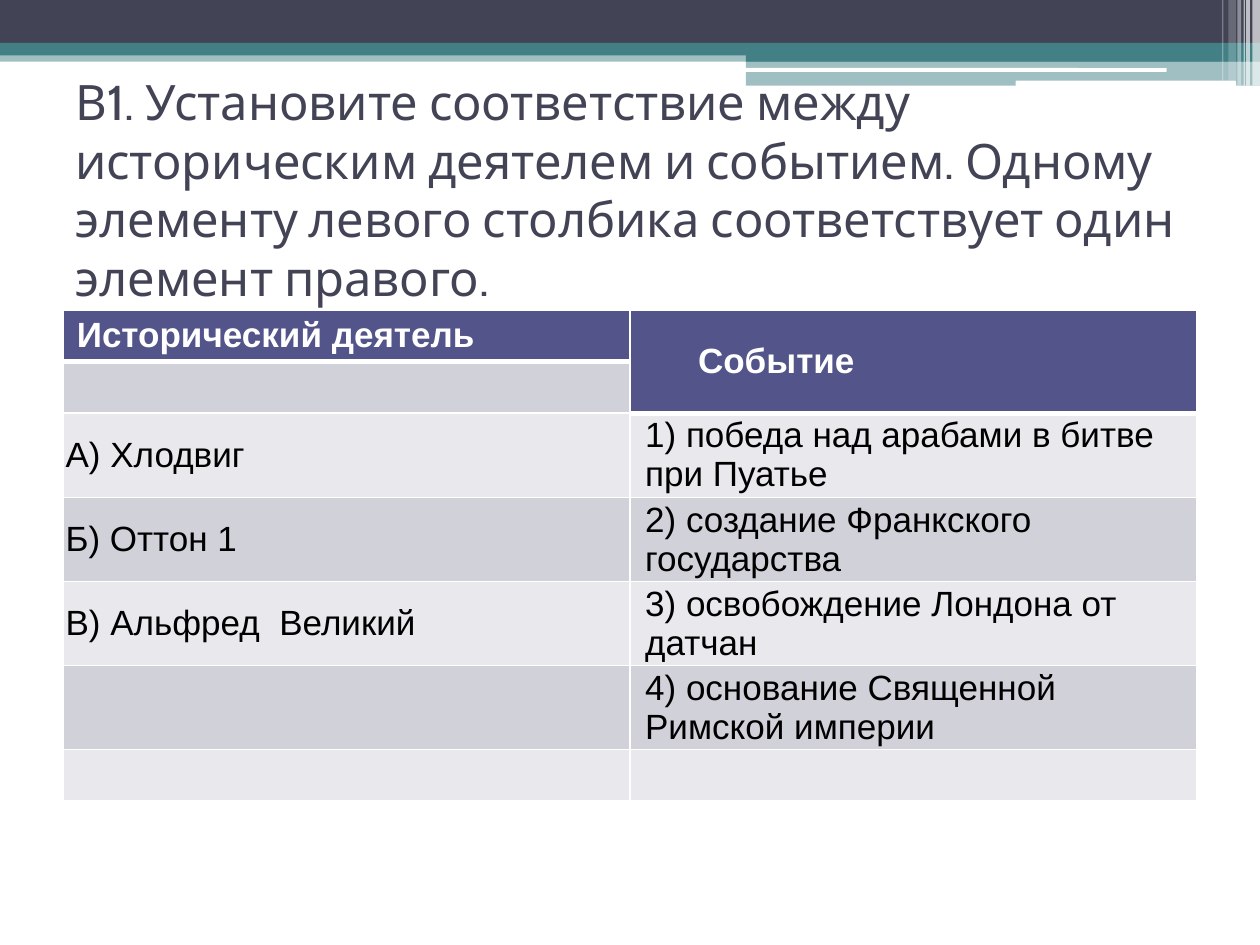
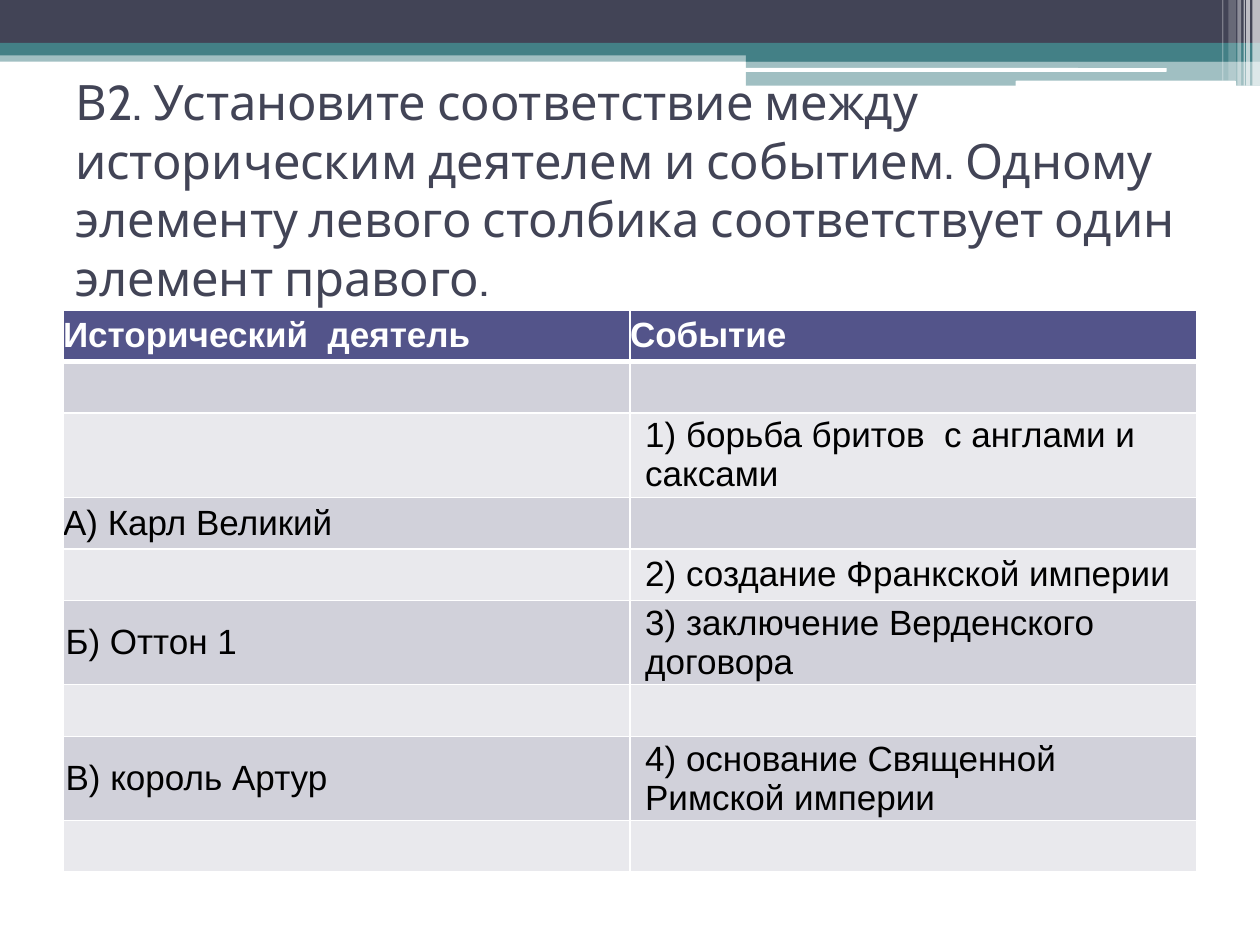
from lxml import etree
from pptx import Presentation
from pptx.dml.color import RGBColor
from pptx.enum.shapes import MSO_SHAPE
from pptx.enum.text import MSO_ANCHOR
from pptx.oxml.ns import qn
from pptx.util import Inches, Pt

RECT, ROUND = MSO_SHAPE.RECTANGLE, MSO_SHAPE.ROUNDED_RECTANGLE
MIDDLE = MSO_ANCHOR.MIDDLE
WHITE = RGBColor(0xFF, 0xFF, 0xFF)
BLACK = RGBColor(0x00, 0x00, 0x00)
SLATE = RGBColor(0x42, 0x44, 0x56)
TEAL = RGBColor(0x43, 0x80, 0x86)
INDIGO = RGBColor(0x53, 0x54, 0x8A)
STRIPES = (RGBColor(0xE9, 0xE9, 0xED), RGBColor(0xD1, 0xD1, 0xDA))

TITLE = {"name": "Cabin", "size": Pt(27.9)}
HEAD = {"name": "Arial", "size": Pt(20), "bold": True}
BODY = {"name": "Arial", "size": Pt(20), "bold": False}

# Header bands: left, top, width, height, colour, opacity in percent, shape
BANDS = [
    (0, 0.4, 10, 0.09, TEAL, 50, RECT),
    (0, 0, 10, 0.34, SLATE, 100, RECT),
    (0, 0.34, 10, 0.1, TEAL, 100, RECT),
    (5.92, 0.39, 4.08, 0.1, TEAL, 100, RECT),
    (5.92, 0.48, 4.08, 0.2, TEAL, 50, RECT),
    (5.91, 0.54, 3.35, 0.03, WHITE, 100, ROUND),
    (8.06, 0.64, 1.75, 0.05, WHITE, 100, ROUND),
]
# Vertical strips at the right edge: left, width, height, opacity
STRIPS = [
    (9.94, 0.06, 0.68, 65), (9.89, 0.03, 0.68, 65), (9.87, 0.01, 0.68, 60),
    (9.82, 0.03, 0.68, 40), (9.75, 0.06, 0.64, 20), (9.7, 0.01, 0.64, 30),
]
BANDS += [(x, 0, w, h, WHITE, a, RECT) for x, w, h, a in STRIPS]

TITLE_BOX = (0.5, 1.25, 9, 1.17)
TABLE_BOX = (0.5, 2.46, 9)
ROW = 0.41  # least height; rows with two lines grow

TASK = ("Установите соответствие между историческим деятелем и событием. "
        "Одному элементу левого столбика соответствует один элемент правого.")

# Each cell is (text, left indent) or None when empty
QUIZ = [
    ("В1", [
        (("Исторический деятель", 0.11), ("Событие", 0.54)),
        (None, None),
        (("А) Хлодвиг", 0.02),
         ("1) победа над арабами в битве при Пуатье", 0.12)),
        (("Б) Оттон 1", 0.02),
         ("2) создание Франкского государства", 0.12)),
        (("В) Альфред  Великий", 0.02),
         ("3) освобождение Лондона от датчан", 0.12)),
        (None, ("4) основание Священной Римской империи", 0.12)),
        (None, None),
    ], True),
    ("В2", [
        (("Исторический  деятель", 0), ("Событие", 0)),
        (None, None),
        (None, ("1) борьба бритов  с англами и саксами", 0.12)),
        (("А) Карл Великий", 0), None),
        (None, ("2) создание Франкской империи", 0.12)),
        (("Б) Оттон 1", 0.02),
         ("3) заключение Верденского договора", 0.12)),
        (None, None),
        (("В) король Артур", 0.02),
         ("4) основание Священной Римской империи", 0.12)),
        (None, None),
    ], False),
]


def style(run, form, color):
    for key, value in form.items():
        setattr(run.font, key, value)
    run.font.color.rgb = color


def add_bands(slide):
    for x, y, w, h, color, alpha, kind in BANDS:
        band = slide.shapes.add_shape(kind, *map(Inches, (x, y, w, h)))
        band.shadow.inherit = False
        band.line.fill.background()
        band.fill.solid()
        band.fill.fore_color.rgb = color
        if alpha < 100:
            node = band.fill._xPr.find(".//" + qn("a:srgbClr"))
            etree.SubElement(node, qn("a:alpha"), val=str(alpha * 1000))


def add_title(slide, box, text):
    frame = slide.shapes.add_textbox(*map(Inches, box)).text_frame
    frame.word_wrap = True
    frame.vertical_anchor = MIDDLE
    # The deep lower margin lifts the text clear of the table
    frame.margin_top, frame.margin_bottom = Inches(0.05), Inches(0.72)
    para = frame.paragraphs[0]
    para.line_spacing = Pt(33.5)
    run = para.add_run()
    run.text = text
    style(run, TITLE, SLATE)


def set_edges(cell, widths):
    props = cell._tc.get_or_add_tcPr()
    for spot, (side, width) in enumerate(widths.items()):
        line = etree.Element(qn("a:ln" + side), w=str(Pt(width)))
        fill = etree.SubElement(line, qn("a:solidFill"))
        etree.SubElement(fill, qn("a:srgbClr"), val=str(WHITE))
        props.insert(spot, line)


def fill_cell(cell, item, is_head):
    if not item:
        return
    text, indent = item
    cell.vertical_anchor = MIDDLE
    for side in ("left", "right", "top", "bottom"):
        setattr(cell, "margin_" + side, 0)
    para = cell.text_frame.paragraphs[0]
    para._p.get_or_add_pPr().set("marL", str(Inches(indent)))
    run = para.add_run()
    run.text = text
    style(run, HEAD if is_head else BODY, WHITE if is_head else BLACK)


def add_table(slide, box, rows, merge):
    x, y, w = box
    table = slide.shapes.add_table(
        len(rows), 2, *map(Inches, (x, y, w, ROW * len(rows)))).table
    for col in table.columns:
        col.width = Inches(w / 2)
    if merge:
        table.cell(0, 1).merge(table.cell(1, 1))

    def in_head(r, c):
        return r == 0 or table.cell(r, c).is_spanned

    for r, row in enumerate(rows):
        table.rows[r].height = Inches(ROW)
        for c, item in enumerate(row):
            cell, head = table.cell(r, c), in_head(r, c)
            cell.fill.solid()
            cell.fill.fore_color.rgb = INDIGO if head else STRIPES[r % 2]
            below = not head and in_head(r - 1, c)
            set_edges(cell, {"L": 1, "R": 1, "T": 3 if below else 1,
                             "B": 3 if head else 1})
            fill_cell(cell, item, head)


def main():
    deck = Presentation()
    deck.slide_width, deck.slide_height = Inches(10), Inches(7.5)
    for label, rows, merge in QUIZ:
        slide = deck.slides.add_slide(deck.slide_layouts[6])
        add_bands(slide)
        add_title(slide, TITLE_BOX, f"{label}. {TASK}")
        add_table(slide, TABLE_BOX, rows, merge)
    deck.save("out.pptx")


if __name__ == "__main__":
    main()
